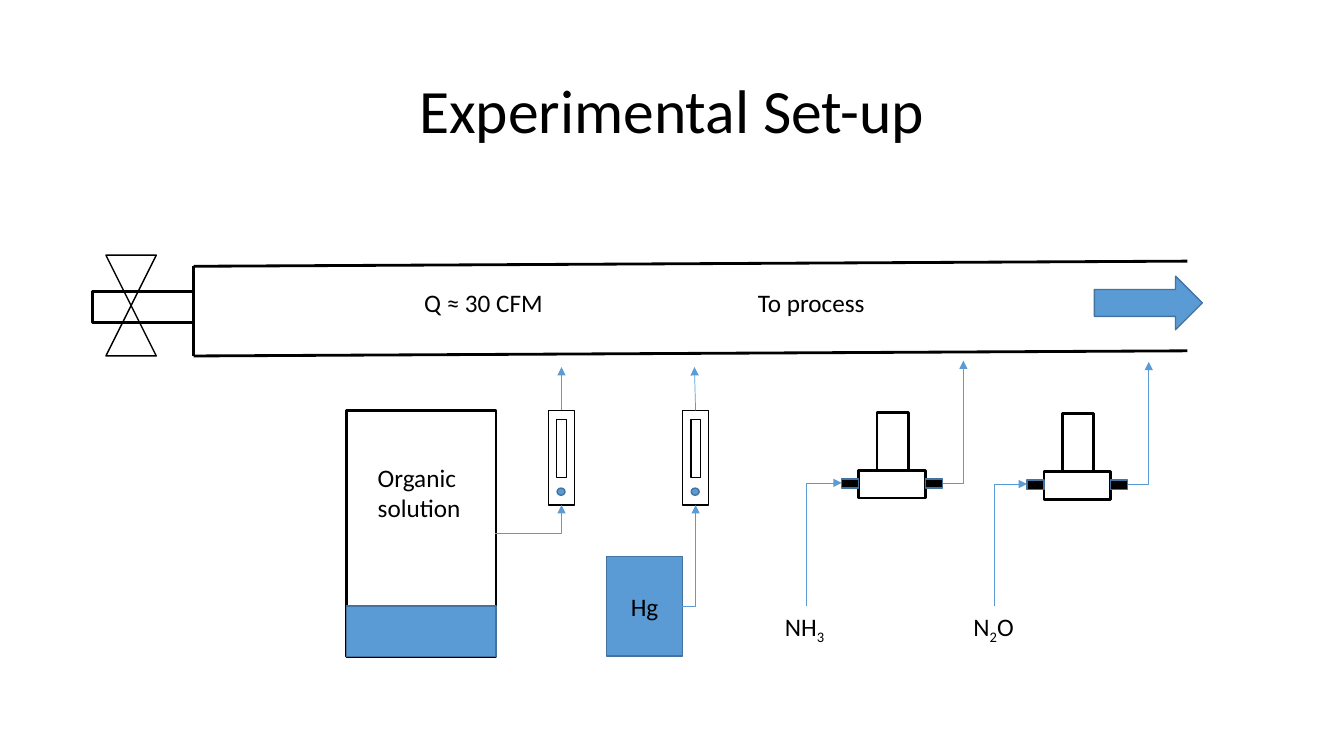
"""Builds the experimental set-up slide: a duct with four dosing lines."""
from lxml import etree
from pptx import Presentation
from pptx.dml.color import RGBColor
from pptx.enum.shapes import MSO_CONNECTOR, MSO_SHAPE
from pptx.enum.text import MSO_ANCHOR, PP_ALIGN
from pptx.oxml.ns import qn
from pptx.util import Cm, Pt

RECT, OVAL = MSO_SHAPE.RECTANGLE, MSO_SHAPE.OVAL
VALVE, FLOW_ARROW = MSO_SHAPE.FLOWCHART_COLLATE, MSO_SHAPE.RIGHT_ARROW
STRAIGHT = MSO_CONNECTOR.STRAIGHT
CENTER, MIDDLE = PP_ALIGN.CENTER, MSO_ANCHOR.MIDDLE

COLORS = {"ink": "000000", "blue": "5B9BD5", "edge": "43739E"}
FONT = "Calibri"
TITLE = "Experimental Set-up"

LABELS = [
    (["Q ≈ 30 CFM"], (10.44, 7.11, 4.27, 1.02)),
    (["To process"], (18.85, 7.11, 3.23, 1.02)),
    (["Organic", "solution"], (9.27, 11.53, 2.62, 1.8)),
    (["NH_3"], (19.53, 15.27, 1.55, 1.02)),
    (["N_2_O"], (24.28, 15.27, 1.57, 1.02)),
]
DUCT_WALLS = [
    ((4.88, 6.71), (29.92, 6.58)),
    ((4.88, 8.97), (29.92, 8.84)),
    ((4.88, 6.71), (4.88, 8.97)),
]
VESSELS = [
    (RECT, (2.34, 7.34, 2.54, 0.79), None, "ink", 2),
    (VALVE, (2.67, 6.43, 1.27, 2.54), None, "ink", 1),
    (RECT, (8.74, 10.34, 3.76, 6.2), None, "ink", 2),
    (RECT, (8.74, 15.27, 3.76, 1.27), "blue", "edge", 1),
    (FLOW_ARROW, (27.58, 6.96, 2.72, 1.35), "blue", "edge", 1),
]
MERCURY = ("Hg", (15.29, 14.02, 1.91, 2.51))
FLOWMETERS = [(13.82, 10.34), (17.2, 10.34)]
FLOWMETER_PARTS = [
    (RECT, (0, 0, 0.66, 2.39), None, "ink", 1),
    (RECT, (0.21, 0.23, 0.25, 1.47), None, "ink", 1),
    (OVAL, (0.22, 1.96, 0.2, 0.18), "blue", "edge", 1),
]
PUMPS = [(21.21, 10.39), (25.88, 10.42)]
PUMP_PARTS = [
    (RECT, (0.89, 0, 0.79, 1.47), None, "ink", 2),
    (RECT, (0.43, 1.47, 1.68, 0.69), None, "ink", 2),
    (RECT, (2.11, 1.68, 0.43, 0.23), "ink", "edge", 1),
    (RECT, (0, 1.68, 0.43, 0.23), "ink", "edge", 1),
]
PORT_HEIGHT = 1.78
PUMP_OUTLET = ((2.55, PORT_HEIGHT), (3.07, -1.3))
GAS_STARTS = [(20.32, 15.27), (25.07, 15.27)]
METER_INLETS = [((12.47, 13.44), (14.15, 12.73)), ((17.2, 15.27), (17.53, 12.73))]
METER_OUTLETS = [((14.15, 10.34), (14.15, 9.25)), ((17.53, 10.34), (17.5, 9.25))]


def rgb(color):
    return RGBColor.from_string(COLORS[color])


def style_paragraph(paragraph, size, align=None):
    paragraph.alignment = align
    paragraph.font.name = FONT
    paragraph.font.size = Pt(size)
    paragraph.font.color.rgb = rgb("ink")


def draw_part(slide, kind, box, fill, line, weight, origin=(0, 0)):
    x, y, width, height = box
    part = slide.shapes.add_shape(
        kind, Cm(origin[0] + x), Cm(origin[1] + y), Cm(width), Cm(height))
    part.shadow.inherit = False
    if fill:
        part.fill.solid()
        part.fill.fore_color.rgb = rgb(fill)
    else:
        part.fill.background()
    part.line.color.rgb = rgb(line)
    part.line.width = Pt(weight)
    return part


def draw_line(slide, start, end, color="ink", weight=2):
    line = slide.shapes.add_connector(
        STRAIGHT, *(Cm(value) for value in (*start, *end)))
    line.line.color.rgb = rgb(color)
    line.line.width = Pt(weight)
    etree.SubElement(line._element.spPr, qn("a:effectLst"))
    return line


def draw_tubing(slide, start, end, bend=None):
    """Draws an arrow; bend names the leg drawn first, across or up."""
    if bend == "up":
        mid_x, mid_y = (start[0] + end[0]) / 2, (start[1] + end[1]) / 2
        half_rise, half_run = (start[1] - end[1]) / 2, (end[0] - start[0]) / 2
        start = (mid_x + half_rise, mid_y + half_run)
        end = (mid_x - half_rise, mid_y - half_run)
    tubing = draw_line(slide, start, end, "blue", 0.5)
    properties = tubing._element.spPr
    etree.SubElement(properties.find(qn("a:ln")), qn("a:tailEnd"), type="triangle")
    if bend:
        properties.find(qn("a:prstGeom")).set("prst", "bentConnector2")
    if bend == "up":
        properties.find(qn("a:xfrm")).set("rot", "5400000")


def write_label(slide, lines, box):
    frame = slide.shapes.add_textbox(*(Cm(value) for value in box)).text_frame
    frame.word_wrap = False
    for index, line in enumerate(lines):
        paragraph = frame.add_paragraph() if index else frame.paragraphs[0]
        style_paragraph(paragraph, 18)
        for position, piece in enumerate(line.split("_")):
            run = paragraph.add_run()
            run.text = piece
            if position % 2:
                run._r.get_or_add_rPr().set("baseline", "-25000")


def main():
    deck = Presentation()
    deck.slide_width, deck.slide_height = Cm(33.87), Cm(19.05)
    slide = deck.slides.add_slide(deck.slide_layouts[5])

    title = slide.shapes.title
    title.left, title.top, title.width, title.height = (
        Cm(value) for value in (2.33, 1.01, 29.21, 3.68))
    title.text_frame.text = TITLE
    title.text_frame.vertical_anchor = MIDDLE
    style_paragraph(title.text_frame.paragraphs[0], 44, CENTER)
    title.text_frame.paragraphs[0].line_spacing = 0.9

    for start, end in DUCT_WALLS:
        draw_line(slide, start, end)
    for vessel in VESSELS:
        draw_part(slide, *vessel)

    name, box = MERCURY
    mercury = draw_part(slide, RECT, box, "blue", "edge", 1)
    mercury.text_frame.text = name
    mercury.text_frame.vertical_anchor = MIDDLE
    style_paragraph(mercury.text_frame.paragraphs[0], 18, CENTER)

    for origins, parts in ((FLOWMETERS, FLOWMETER_PARTS), (PUMPS, PUMP_PARTS)):
        for origin in origins:
            for part in parts:
                draw_part(slide, *part, origin=origin)

    for start, end in METER_INLETS:
        draw_tubing(slide, start, end, "across")
    for start, end in METER_OUTLETS:
        draw_tubing(slide, start, end)
    for (x, y), gas_start in zip(PUMPS, GAS_STARTS):
        outlet_start, outlet_end = ((x + dx, y + dy) for dx, dy in PUMP_OUTLET)
        draw_tubing(slide, outlet_start, outlet_end, "across")
        draw_tubing(slide, gas_start, (x, y + PORT_HEIGHT), "up")

    for lines, box in LABELS:
        write_label(slide, lines, box)
    deck.save("out.pptx")


if __name__ == "__main__":
    main()
